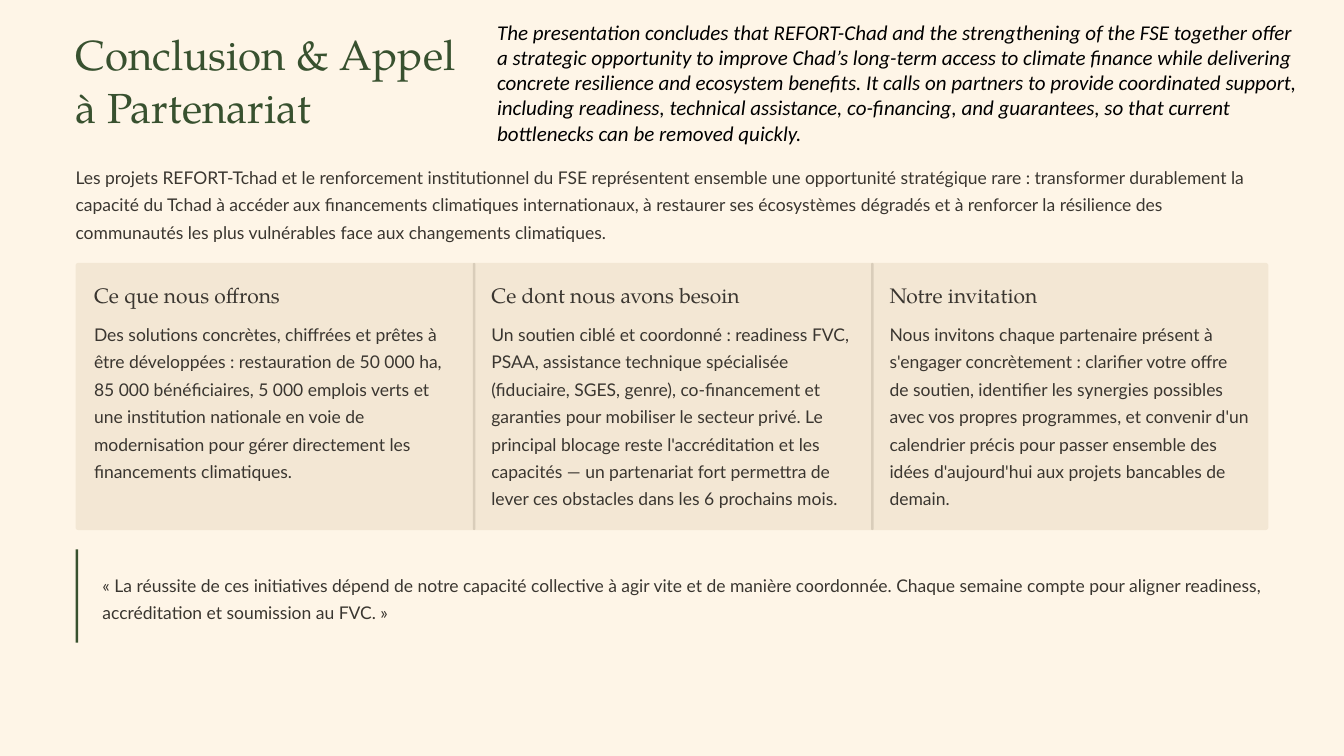
from pptx import Presentation
from pptx.dml.color import RGBColor
from pptx.enum.shapes import MSO_SHAPE as Preset
from pptx.enum.text import MSO_ANCHOR as Anchor, MSO_AUTO_SIZE as AutoSize
from pptx.util import Emu, Pt

PX = 9144  # 100 px to the inch

CREAM = RGBColor(0xFE, 0xF5, 0xE7)
SAND = RGBColor(0xF3, 0xE7, 0xD4)
TAUPE = RGBColor(0xD9, 0xCD, 0xBA)
GREEN = RGBColor(0x38, 0x51, 0x2F)
INK = RGBColor(0x3A, 0x36, 0x30)
BLACK = RGBColor(0, 0, 0)

SERIF, SANS, NOTE = "TeX Gyre Pagella", "Lato", "Calibri"


class Deck:
    def __init__(self, width, height):
        self.prs = Presentation()
        self.prs.slide_width, self.prs.slide_height = Emu(width * PX), Emu(height * PX)
        self.slide = self.prs.slides.add_slide(self.prs.slide_layouts[6])
        background = self.slide.background.fill
        background.solid()
        background.fore_color.rgb = CREAM

    def block(self, left, top, width, height, color, rounding=None):
        preset = Preset.RECTANGLE if rounding is None else Preset.ROUNDED_RECTANGLE
        block = self.slide.shapes.add_shape(
            preset, *(Emu(v * PX) for v in (left, top, width, height)))
        if rounding is not None:
            block.adjustments[0] = rounding
        block.shadow.inherit = False
        block.fill.solid()
        block.fill.fore_color.rgb = color
        block.line.fill.background()

    def text(self, left, top, width, height, words, font=SANS, size=15, color=INK,
             spacing=None, wrap=True, italic=False, insets=(0, 0)):
        box = self.slide.shapes.add_textbox(
            *(Emu(v * PX) for v in (left, top, width, height)))
        frame = box.text_frame
        frame.text = words
        frame.word_wrap = wrap
        frame.auto_size = AutoSize.NONE
        frame.vertical_anchor = Anchor.TOP
        frame.margin_left = frame.margin_right = Emu(insets[0] * PX)
        frame.margin_top = frame.margin_bottom = Emu(insets[1] * PX)
        for paragraph in frame.paragraphs:
            if spacing:
                paragraph.line_spacing = Pt(spacing)
            for run in paragraph.runs:
                run.font.name, run.font.size = font, Pt(size)
                run.font.color.rgb = color
                run.font.italic = italic

    def body(self, left, top, width, height, words):
        self.text(left, top, width, height, words, spacing=23.5)

    def heading(self, left, top, width, height, words, size, color, spacing):
        self.text(left, top, width, height, words, SERIF, size, color, spacing, wrap=False)


LEFT, WIDTH = 90, 1420
PANEL_TOP, PANEL_HEIGHT = 313, 318
OFFERS = [
    ("Ce que nous offrons", 252,
     "Des solutions concrètes, chiffrées et prêtes à être développées : restauration de "
     "50 000 ha, 85 000 bénéficiaires, 5 000 emplois verts et une institution nationale en "
     "voie de modernisation pour gérer directement les financements climatiques."),
    ("Ce dont nous avons besoin", 313,
     "Un soutien ciblé et coordonné : readiness FVC, PSAA, assistance technique spécialisée "
     "(fiduciaire, SGES, genre), co-financement et garanties pour mobiliser le secteur privé. "
     "Le principal blocage reste l'accréditation et les capacités — un partenariat fort "
     "permettra de lever ces obstacles dans les 6 prochains mois."),
    ("Notre invitation", 252,
     "Nous invitons chaque partenaire présent à s'engager concrètement : clarifier votre offre "
     "de soutien, identifier les synergies possibles avec vos propres programmes, et convenir "
     "d'un calendrier précis pour passer ensemble des idées d'aujourd'hui aux projets "
     "bancables de demain."),
]


def main():
    deck = Deck(1600, 900)

    # Title and introduction
    deck.heading(LEFT, 32, 495, 63, "Conclusion & Appel\nà Partenariat", 36, GREEN, 45)
    deck.body(LEFT, 191, WIDTH, 99,
              "Les projets REFORT-Tchad et le renforcement institutionnel du FSE représentent "
              "ensemble une opportunité stratégique rare : transformer durablement la capacité "
              "du Tchad à accéder aux financements climatiques internationaux, à restaurer ses "
              "écosystèmes dégradés et à renforcer la résilience des communautés les plus "
              "vulnérables face aux changements climatiques.")

    # Three-column panel
    deck.block(LEFT, PANEL_TOP, WIDTH, PANEL_HEIGHT, SAND, 0.01)
    for i, (title, title_width, details) in enumerate(OFFERS):
        column = LEFT + round(i * WIDTH / len(OFFERS))
        if i:
            deck.block(column, PANEL_TOP, 3, PANEL_HEIGHT, TAUPE, 0.5)
        deck.heading(column + 22, PANEL_TOP + 22, title_width, 31, title, 18, INK, 22.5)
        deck.body(column + 22, PANEL_TOP + 65, 430, 232, details)

    # Closing quote with its side bar
    deck.body(122, 677, 1388, 66,
              "« La réussite de ces initiatives dépend de notre capacité collective à agir vite "
              "et de manière coordonnée. Chaque semaine compte pour aligner readiness, "
              "accréditation et soumission au FVC. »")
    deck.block(LEFT, 654, 3, 111, GREEN)

    # English summary
    deck.text(582, 18, 984, 162,
              "The presentation concludes that REFORT-Chad and the strengthening of the FSE "
              "together offer a strategic opportunity to improve Chad’s long-term access to "
              "climate finance while delivering concrete resilience and ecosystem benefits. It "
              "calls on partners to provide coordinated support, including readiness, technical "
              "assistance, co-financing, and guarantees, so that current bottlenecks can be "
              "removed quickly.",
              NOTE, 18, BLACK, italic=True, insets=(10, 5))

    deck.prs.save("out.pptx")


if __name__ == "__main__":
    main()
